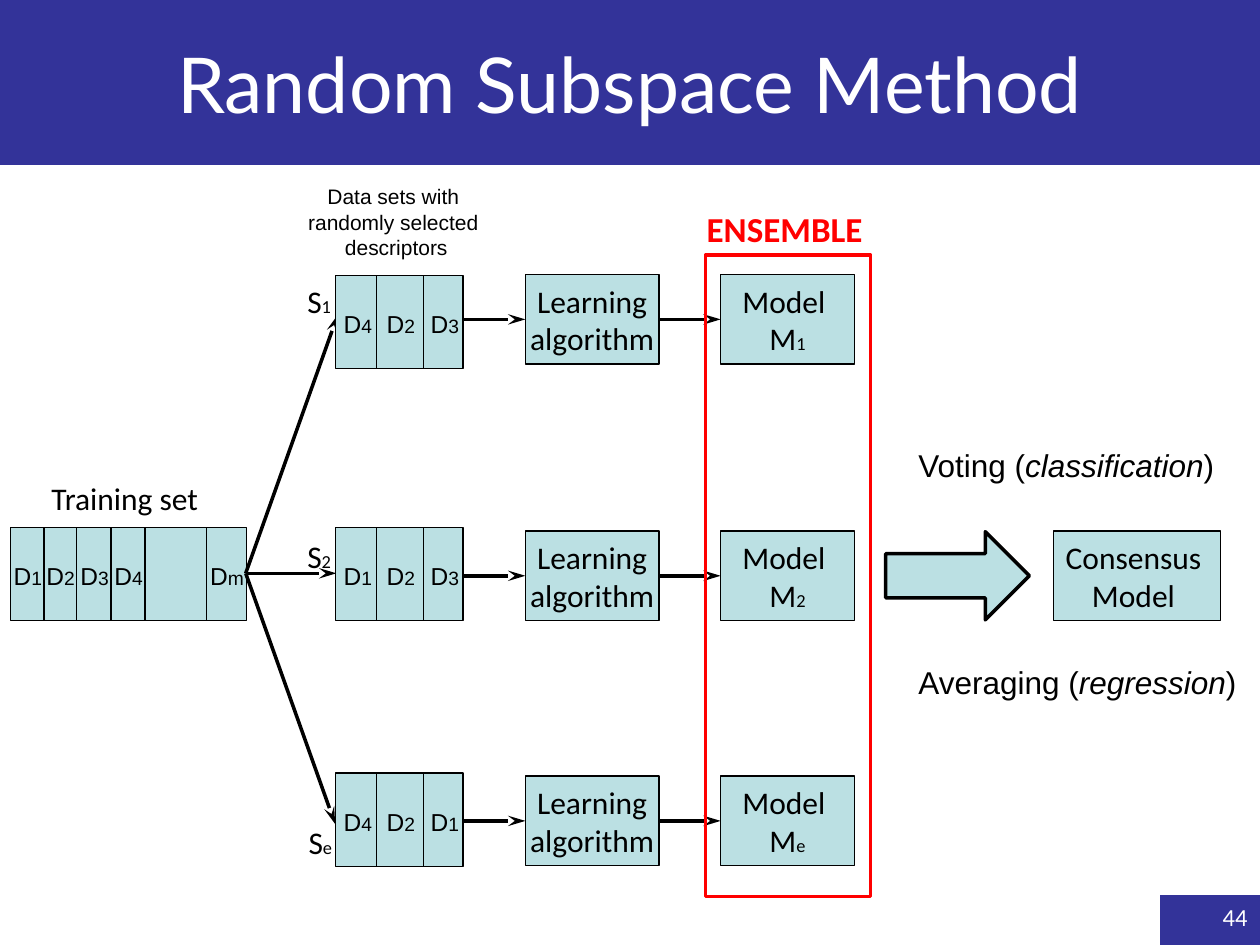
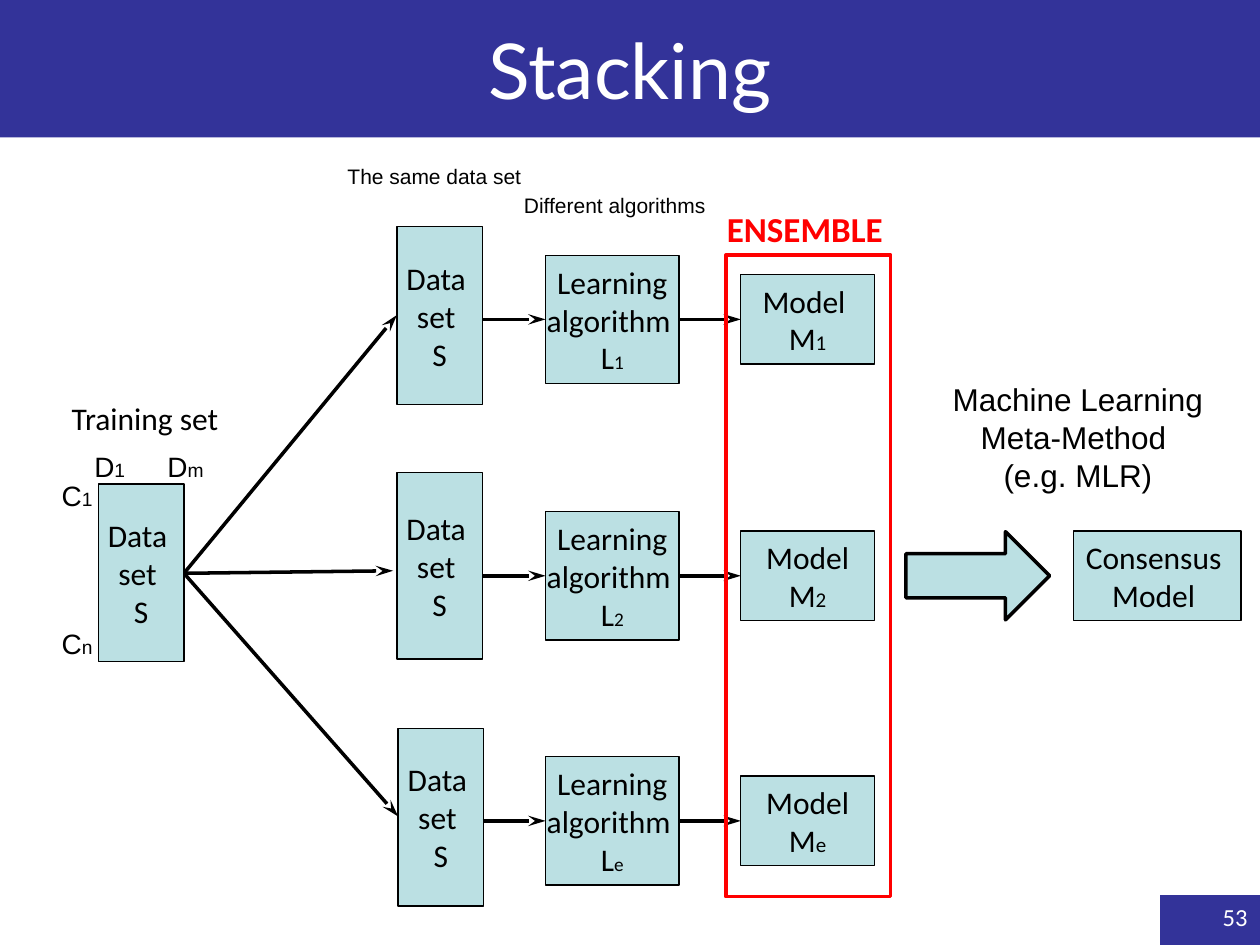
from dataclasses import dataclass
from typing import Optional, Sequence

from lxml.etree import SubElement
from pptx import Presentation
from pptx.dml.color import RGBColor
from pptx.enum.shapes import MSO_CONNECTOR, MSO_SHAPE
from pptx.enum.text import MSO_ANCHOR, MSO_AUTO_SIZE, PP_ALIGN
from pptx.oxml.ns import qn
from pptx.util import Emu, Inches, Pt

COLOURS = {
    "navy": "333399",
    "box": "BBE0E3",
    "ink": "000000",
    "white": "FFFFFF",
    "red": "FF0000",
}

# The page is a grid of 100 columns by 75 rows
WIDTH, HEIGHT = Inches(10), Inches(7.5)
COLUMN, ROW = WIDTH // 100, HEIGHT // 75

# Middle rows of the three parallel lanes
LANES = (25.35, 45.7, 65.15)
LEARNER_LEFT, MODEL_LEFT, BOX_WIDTH, BOX_HEIGHT = 41.7, 57.2, 10.6, 7.1
THIN, THICK = 0.75, 2


@dataclass(frozen=True)
class Area:
    left: float
    top: float
    width: float
    height: float

    def emu(self) -> tuple:
        return (Emu(round(self.left * COLUMN)), Emu(round(self.top * ROW)),
                Emu(round(self.width * COLUMN)), Emu(round(self.height * ROW)))


@dataclass(frozen=True)
class Style:
    """Text style; every second part between bars is small or italic."""
    size: float = 18
    font: str = "Calibri"
    colour: str = "ink"
    align: PP_ALIGN = PP_ALIGN.LEFT
    bold: bool = False
    small: Optional[float] = None
    wrap: bool = False


@dataclass(frozen=True)
class Label:
    area: Area
    lines: Sequence[str]
    style: Style = Style()


@dataclass(frozen=True)
class Band:
    """A row of descriptor cells."""
    area: Area
    dividers: Sequence[float]
    labels: Sequence[tuple]


CENTRED = Style(align=PP_ALIGN.CENTER)
NOTE = Style(12, "Arial")
DESCRIPTOR = Style(14, "Arial", small=11)
CORNER = Style(16, "Arial", small=11)
ARIAL = Style(font="Arial")
SUBSET = Style(small=10.5)


def rgb(name: str) -> RGBColor:
    return RGBColor.from_string(COLOURS[name])


def write(frame, lines: Sequence[str], style: Style) -> None:
    frame.word_wrap = style.wrap
    for index, line in enumerate(lines):
        para = frame.paragraphs[0] if index == 0 else frame.add_paragraph()
        para.alignment = style.align
        para.font.size = Pt(style.size)
        para.font.name = style.font
        para.font.bold = style.bold
        para.font.color.rgb = rgb(style.colour)
        for position, part in enumerate(line.split("|")):
            span = para.add_run()
            span.text = part
            if position % 2 and style.small:
                span.font.size = Pt(style.small)
            elif position % 2:
                span.font.italic = True


def add_label(page, label: Label) -> None:
    box = page.shapes.add_textbox(*label.area.emu())
    write(box.text_frame, label.lines, label.style)
    box.text_frame.auto_size = MSO_AUTO_SIZE.SHAPE_TO_FIT_TEXT


def add_box(page, area: Area, lines: Sequence[str] = (), style: Style = CENTRED,
            fill: Optional[str] = "box", line: str = "ink", weight: float = THIN,
            kind: MSO_SHAPE = MSO_SHAPE.RECTANGLE, anchor: MSO_ANCHOR = MSO_ANCHOR.MIDDLE) -> None:
    box = page.shapes.add_shape(kind, *area.emu())
    box.shadow.inherit = False
    if fill:
        box.fill.solid()
        box.fill.fore_color.rgb = rgb(fill)
    else:
        box.fill.background()
    box.line.color.rgb = rgb(line)
    box.line.width = Pt(weight)
    box.text_frame.vertical_anchor = anchor
    write(box.text_frame, lines, style)


def add_line(page, start: tuple, end: tuple, weight: float = THICK, arrow: bool = True) -> None:
    ends = [Emu(round(value * unit)) for point in (start, end)
            for value, unit in zip(point, (COLUMN, ROW))]
    line = page.shapes.add_connector(MSO_CONNECTOR.STRAIGHT, *ends)
    line.line.color.rgb = rgb("ink")
    line.line.width = Pt(weight)
    properties = line._element.spPr
    if arrow:
        SubElement(properties.find(qn("a:ln")), qn("a:tailEnd"), type="stealth", len="lg")
    SubElement(properties, qn("a:effectLst"))


def add_band(page, band: Band) -> None:
    area = band.area
    add_box(page, area)
    for column in band.dividers:
        add_line(page, (column, area.top + area.height), (column, area.top), THIN, arrow=False)
    for left, text in band.labels:
        # The letter m is wider than a digit
        width = 4.9 if text.endswith("m") else 4.3
        add_label(page, Label(Area(left, area.top + 2.2, width, 3.4), [text], DESCRIPTOR))


def add_page(deck, title: str, title_rows: float, number: str):
    """Page with the title band and the page number."""
    page = deck.slides.add_slide(deck.slide_layouts[5])
    heading = page.shapes.title
    heading.left, heading.top, heading.width, heading.height = Area(0, 0, 100, title_rows).emu()
    heading.fill.solid()
    heading.fill.fore_color.rgb = rgb("navy")
    heading.text_frame.vertical_anchor = MSO_ANCHOR.MIDDLE
    write(heading.text_frame, [title],
          Style(44, "Lato", "white", PP_ALIGN.CENTER, wrap=True))
    add_box(page, Area(92.1, 71.1, 7.9, 3.9), [number],
            Style(14, colour="white", align=PP_ALIGN.RIGHT, wrap=True),
            fill="navy", line="navy", anchor=MSO_ANCHOR.TOP)
    return page


def add_lanes(page, shift: float, learners: Sequence, learner_height: float,
              models: Sequence, model_small: float) -> None:
    """Learners, models, ensemble frame and consensus, moved right by shift."""
    learner_left, model_left = LEARNER_LEFT + shift, MODEL_LEFT + shift
    learner_style = Style(align=PP_ALIGN.CENTER, small=11)
    model_style = Style(align=PP_ALIGN.CENTER, small=model_small)
    for middle, learner, model in zip(LANES, learners, models):
        add_box(page, Area(learner_left, middle - learner_height / 2, BOX_WIDTH, learner_height),
                learner, learner_style)
        add_box(page, Area(model_left, middle - BOX_HEIGHT / 2, BOX_WIDTH, BOX_HEIGHT),
                model, model_style)
        add_line(page, (learner_left - 5, middle), (learner_left, middle))
        add_line(page, (learner_left + BOX_WIDTH, middle), (model_left, middle))

    add_box(page, Area(56 + shift, 20.25, 13.1, 50.9), fill=None, line="red", weight=THICK)
    add_label(page, Label(Area(55.1 + shift, 16, 14.9, 4.4), ["ENSEMBLE"],
                          Style(20, colour="red", bold=True, wrap=True)))
    add_box(page, Area(70.3 + shift, 42.2, 11.4, 7), weight=THICK, kind=MSO_SHAPE.RIGHT_ARROW)
    add_box(page, Area(83.6 + shift, 42.15, 13.3, BOX_HEIGHT), ["Consensus ", "Model "])


def build_random_subspace(deck) -> None:
    page = add_page(deck, "Random Subspace Method", 13.1, "44")

    # Training set and its descriptors
    add_band(page, Band(Area(0.85, 41.85, 18.7, 7.4), (3.5, 6.1, 8.8, 11.5, 16.4),
                        ((0.1, "D|1"), (2.7, "D|2"), (5.4, "D|3"), (8.1, "D|4"), (15.7, "D|m"))))
    for end in ((26.8, 25), (26.7, 45.5), (26.6, 65.4)):
        add_line(page, (19.5, 45.5), end)

    # Subsets of descriptors
    subsets = ((21.85, "423"), (41.85, "123"), (61.35, "421"))
    for top, digits in subsets:
        labels = [(left, f"D|{digit}") for left, digit in zip((26.3, 29.7, 33.2), digits)]
        add_band(page, Band(Area(26.65, top, 10.1, 7.4), (29.9, 33.6), labels))

    add_lanes(page, 0, [("Learning", "algorithm")] * 3, BOX_HEIGHT,
              [("Model ", f"M|{name}") for name in "12e"], 10.5)

    labels = (
        Label(Area(3.1, 37.5, 13.8, 4), ["Training set"]),
        Label(Area(23.4, 21.9, 3.9, 4), ["S|1"], SUBSET),
        Label(Area(23.4, 42.1, 3.9, 4), ["S|2"], SUBSET),
        Label(Area(23.5, 64.8, 3.9, 4), ["S|e"], SUBSET),
        Label(Area(71.9, 34.9, 25.7, 4), ["Voting (|classification|)"], ARIAL),
        Label(Area(71.9, 52.1, 28.2, 4), ["Averaging (|regression|)"], ARIAL),
        Label(Area(23.4, 14.1, 16.1, 7.1),
              ["Data sets with ", "randomly selected ", "descriptors"],
              Style(12, "Arial", align=PP_ALIGN.CENTER)),
    )
    for label in labels:
        add_label(page, label)


def build_stacking(deck) -> None:
    page = add_page(deck, "Stacking", 10.9, "53")

    # The training set feeds three equal data sets
    for end in ((31.5, 25), (31.2, 45.3), (31.6, 64.8)):
        add_line(page, (14.6, 45.5), end)
    data_sets = (Area(7.8, 38.4, 6.8, 14.1), Area(31.5, 18, 6.8, 14.1),
                 Area(31.5, 37.5, 6.8, 14.8), Area(31.6, 57.8, 6.8, 14.1))
    for area in data_sets:
        add_box(page, area, ["Data ", "set ", "S"])

    add_lanes(page, 1.6, [("Learning", "algorithm ", f"L|{name}") for name in "12e"], 10.2,
              [("Model ", "M|1"), ("Model", "M|2"), ("Model", "M|e")], 12)

    labels = (
        Label(Area(4.7, 31.2, 13.8, 4), ["Training set"]),
        Label(Area(3.9, 37.5, 4.5, 3.7), ["C|1"], CORNER),
        Label(Area(3.9, 49.2, 4.5, 3.7), ["C|n"], CORNER),
        Label(Area(6.5, 35.2, 4.5, 3.7), ["D|1"], CORNER),
        Label(Area(12.3, 35.2, 4.9, 3.7), ["D|m"], CORNER),
        Label(Area(26.6, 12.5, 16.4, 3), ["The same data set"], NOTE),
        Label(Area(40.6, 14.8, 16.5, 3), ["Different algorithms"], NOTE),
        Label(Area(74.2, 29.7, 22.7, 10.1), ["Machine Learning Meta-Method ", "(e.g. MLR)"],
              Style(font="Arial", align=PP_ALIGN.CENTER, wrap=True)),
    )
    for label in labels:
        add_label(page, label)


def main() -> None:
    deck = Presentation()
    deck.slide_width, deck.slide_height = WIDTH, HEIGHT
    build_random_subspace(deck)
    build_stacking(deck)
    deck.save("out.pptx")


if __name__ == "__main__":
    main()
